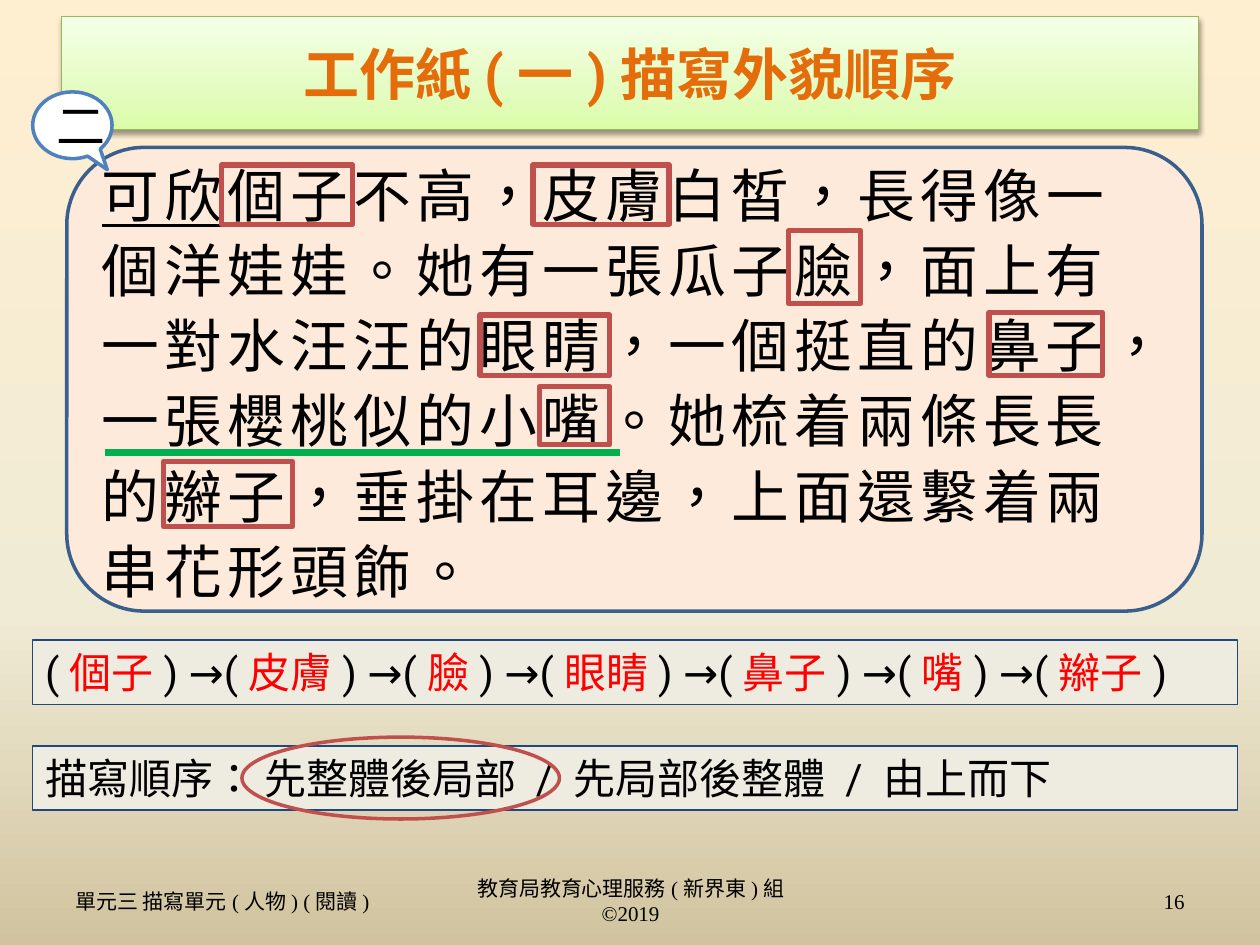
from lxml.etree import SubElement
from pptx import Presentation
from pptx.dml.color import RGBColor
from pptx.enum.shapes import MSO_CONNECTOR, MSO_SHAPE
from pptx.enum.text import MSO_ANCHOR, PP_ALIGN
from pptx.oxml.ns import qn
from pptx.util import Inches, Pt

HUES = dict(black="000000", white="FFFFFF", red="FF0000", mark="C0504D", green="00B050",
            peach="FDEADA", navy="3A5F8C", bar="EEECE1", edge="1F497D", blue="4F81BD",
            orange="E46C0A", lime="98B955")
SKY = [(0, "FFEFD1"), (65, "F0EBD5"), (100, "D1C39F")]
LEAF = [(0, "DAFDA7"), (35, "E4FCC2"), (100, "F5FFE7")]

TITLE = "工作紙(一)描寫外貌順序"
NAME = "可欣"
STORY = ("個子不高，皮膚白皙，長得像一個洋娃娃。她有一張瓜子臉，面上有一對水汪汪的眼睛，"
         "一個挺直的鼻子，一張櫻桃似的小嘴。她梳着兩條長長的辮子，垂掛在耳邊，上面還繫着兩串花形頭飾。")
# each answer with the frame around it in the story
WORDS = [
    ("個子", (1.76, 1.31, 1.04, 0.47)),
    ("皮膚", (4.23, 1.31, 1.08, 0.47)),
    ("臉", (6.26, 1.83, 0.57, 0.58)),
    ("眼睛", (3.81, 2.5, 1.03, 0.48)),
    ("鼻子", (7.85, 2.48, 0.9, 0.5)),
    ("嘴", (4.28, 3.07, 0.56, 0.46)),
    ("辮子", (1.3, 3.66, 1.02, 0.52)),
]
ORDER = "描寫順序： 先整體後局部 / 先局部後整體 / 由上而下"
FOOT = [
    ("單元三 描寫單元(人物) (閱讀)", 0.5, 2.85, PP_ALIGN.LEFT),
    ("教育局教育心理服務(新界東)組 ©2019", 3.42, 3.17, PP_ALIGN.CENTER),
    ("16", 7.17, 2.33, PP_ALIGN.RIGHT),
]


def hue(name):
    return RGBColor.from_string(HUES[name])


def blend(fill, root, stops, angle):
    """Give fill a gradient of any number of stops; root is the XML holding it."""
    fill.gradient()
    fill.gradient_angle = angle
    gs_list = next(root.iter(qn("a:gsLst")))
    for old in list(gs_list):
        gs_list.remove(old)
    for share, code in stops:
        stop = SubElement(gs_list, qn("a:gs"), pos=str(share * 1000))
        SubElement(stop, qn("a:srgbClr"), val=code)


def edge(item, color, width):
    item.line.color.rgb = hue(color)
    item.line.width = Pt(width)


def shape(kind, box, line, width, fill=None):
    item = slide.shapes.add_shape(kind, *map(Inches, box))
    item.shadow.inherit = False
    if fill:
        item.fill.solid()
        item.fill.fore_color.rgb = hue(fill)
    else:
        item.fill.background()
    edge(item, line, width)
    return item


def write(item, runs, font, size, align=PP_ALIGN.LEFT, anchor=MSO_ANCHOR.MIDDLE):
    """Fill item with one paragraph of (text, colour) runs."""
    frame = item.text_frame
    frame.word_wrap = True
    frame.vertical_anchor = anchor
    para = frame.paragraphs[0]
    para.alignment = align
    for text, color in runs:
        run = para.add_run()
        run.text = text
        run.font.name = font
        run.font.size = Pt(size)
        run.font.color.rgb = hue(color)
        run.font._element.set("lang", "zh-TW")
    return para


deck = Presentation()
deck.slide_width, deck.slide_height = Inches(10), Inches(7.5)
slide = deck.slides.add_slide(deck.slide_layouts[5])
blend(slide.background.fill, slide._element, SKY, 270)

# title
title = slide.shapes.title
title.left, title.top, title.width, title.height = map(Inches, (0.49, 0.13, 9.02, 0.9))
blend(title.fill, title._element, LEAF, 90)
edge(title, "lime", 0.75)
glow = SubElement(SubElement(title._element.spPr, qn("a:effectLst")), qn("a:outerShdw"),
                  blurRad=str(Pt(3.1)), dist=str(Pt(1.6)), dir="5400000", rotWithShape="0")
shade = SubElement(glow, qn("a:srgbClr"), val=HUES["black"])
SubElement(shade, qn("a:alpha"), val="38000")
head = write(title, [(TITLE, "orange")], "Roboto", 32, PP_ALIGN.CENTER)
head.runs[0].font.bold = True

# story
card = shape(MSO_SHAPE.ROUNDED_RECTANGLE, (0.53, 1.17, 9.01, 3.68), "navy", 2, "peach")
para = write(card, [(NAME, "black"), (STORY, "black")], "Calibri", 33)
para.line_spacing = Pt(43)
para.runs[0].font.underline = True
for run in para.runs:
    run.font._element.set("spc", "300")

rule = slide.shapes.add_connector(MSO_CONNECTOR.STRAIGHT,
                                  *map(Inches, (0.83, 3.59, 4.92, 3.59)))
edge(rule, "green", 4)
SubElement(rule._element.spPr, qn("a:effectLst"))
for _, box in WORDS:
    shape(MSO_SHAPE.RECTANGLE, box, "mark", 3)

# answers
chain = [("(", "black")]
for word, _ in WORDS:
    chain += [(word, "red"), (") →(", "black")]
chain[-1] = (")", "black")
for top, runs in ((5.08, chain), (5.92, [(ORDER, "black")])):
    bar = shape(MSO_SHAPE.RECTANGLE, (0.26, top, 9.56, 0.51), "edge", 0.75, "bar")
    write(bar, runs, "Roboto", 24, anchor=MSO_ANCHOR.TOP)
shape(MSO_SHAPE.OVAL, (1.92, 5.85, 2.52, 0.65), "mark", 2)

# number bubble
bubble = shape(MSO_SHAPE.OVAL_CALLOUT, (0.26, 0.73, 0.63, 0.53), "blue", 2, "white")
bubble.adjustments[0], bubble.adjustments[1] = 0.44, 0.665
write(bubble, [("二", "black")], "Noto Sans CJK SC", 28, PP_ALIGN.CENTER)

# footer
for text, left, width, align in FOOT:
    note = slide.shapes.add_textbox(*map(Inches, (left, 6.95, width, 0.4)))
    write(note, [(text, "black")], "Times New Roman", 12, align)

deck.save("out.pptx")
